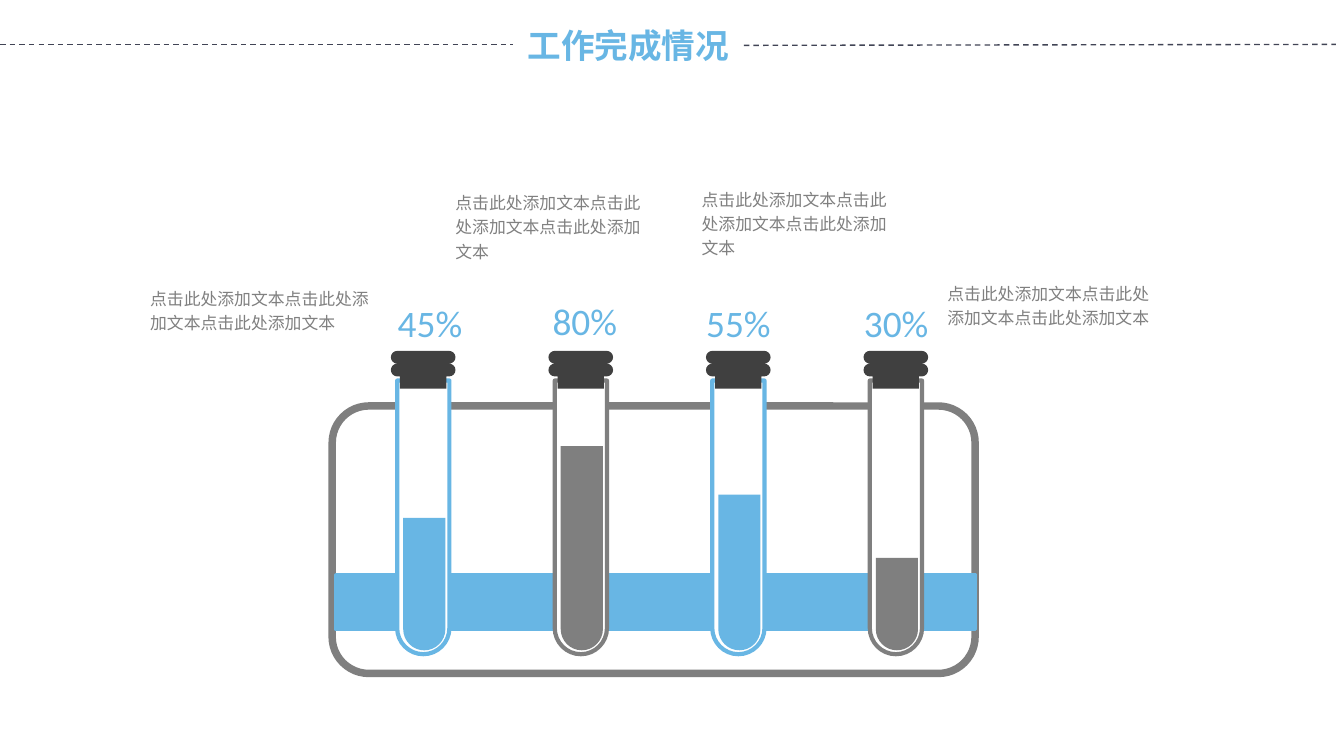
from lxml.etree import SubElement
from pptx import Presentation
from pptx.dml.color import RGBColor
from pptx.enum.dml import MSO_LINE
from pptx.enum.shapes import MSO_CONNECTOR as LINK, MSO_SHAPE as SHAPE
from pptx.enum.text import MSO_ANCHOR as ANCHOR, MSO_AUTO_SIZE as AUTO, PP_ALIGN as ALIGN
from pptx.oxml.ns import qn
from pptx.util import Pt

BLUE = RGBColor(0x68, 0xB6, 0xE4)
GRAY = RGBColor(0x7F, 0x7F, 0x7F)
NOTE = RGBColor(0x80, 0x80, 0x80)
DARK = RGBColor(0x40, 0x40, 0x40)
RULE = RGBColor(0x41, 0x44, 0x55)
WHITE = RGBColor(0xFF, 0xFF, 0xFF)
SANS = "Noto Sans CJK SC"
BLURB = "点击此处添加文本" * 3
BEND = 0.55  # control length of a quarter circle, in radii

# percent, colour, liquid top, label left and top, note box
TUBES = [
    ("45%", BLUE, 277.4, (206, 157.3), (73.4, 149, 139.7, 33)),
    ("80%", GRAY, 239, (288.9, 156.2), (236.9, 97.6, 121, 47)),
    ("55%", BLUE, 265, (371.2, 157.3), (368.8, 95.7, 116.6, 47)),
    ("30%", GRAY, 298.9, (455.7, 157.3), (500.4, 146.3, 123, 33)),
]


def paint(shape, fill=None, line=None, width=1):
    shape.shadow.inherit = False
    if fill is None:
        shape.fill.background()
    else:
        shape.fill.solid()
        shape.fill.fore_color.rgb = fill
    if line is None:
        shape.line.fill.background()
    else:
        shape.line.color.rgb = line
        shape.line.width = Pt(width)


def write(frame, text, size, color, font, bold=False):
    par = frame.paragraphs[0]
    run = par.add_run()
    run.text = text
    run.font.size = Pt(size)
    run.font.bold = bold
    run.font.color.rgb = color
    run.font.name = font
    SubElement(run.font._element, qn("a:ea"), typeface=font)
    return par


def outline(slide, start, parts):
    """Each part is a tuple of points: one for a line, three for a curve."""
    spots = [(Pt(x), Pt(y)) for part in parts for x, y in part]
    path = slide.shapes.build_freeform(Pt(start[0]), Pt(start[1]), scale=1.0)
    path.add_line_segments(spots, close=True)
    shape = path.convert_to_shape()
    steps = iter(list(shape._element.iter(qn("a:lnTo"))))
    for part in parts:
        step = next(steps)
        if len(part) == 3:
            curve = step.makeelement(qn("a:cubicBezTo"))
            step.addprevious(curve)
            for piece in (step, next(steps), next(steps)):
                curve.append(piece[0])
                piece.getparent().remove(piece)
    return shape


def quarter(x, y, dx, dy, flat):
    """Curve from (x, y) by (dx, dy), leaving level if flat, else upright."""
    if flat:
        first, last = (x + BEND * dx, y), (x + dx, y + (1 - BEND) * dy)
    else:
        first, last = (x, y + BEND * dy), (x + (1 - BEND) * dx, y + dy)
    return first, last, (x + dx, y + dy)


def round_end(slide, x, y, w, h):
    """A column with a half-circle bottom."""
    r = w / 2
    low = y + h - r
    return outline(slide, (x, y), [
        ((x + w, y),), ((x + w, low),),
        quarter(x + w, low, -r, r, False),
        quarter(x + r, y + h, -r, -r, True),
    ])


def add_cap(slide, x, y, w, h):
    r, inset = 3.43, 4.9
    left, right, end = x + r, x + w - r, x + w
    rows = (y, y + 2 * r)
    parts = [((right, y),)]
    for top in rows:
        parts += [quarter(right, top, r, r, True),
                  quarter(end, top + r, -r, r, False)]
    neck = y + 4 * r
    parts += [((px, py),) for px, py in (
        (end - inset, neck), (end - inset, y + h),
        (x + inset, y + h), (x + inset, neck), (left, neck))]
    for top in reversed(rows):
        parts += [quarter(left, top + 2 * r, -r, -r, True),
                  quarter(x, top + r, r, -r, False)]
    paint(outline(slide, (left, y), parts), DARK)


def add_tube(slide, x, y, w, h, color, level):
    paint(round_end(slide, x, y, w, h), WHITE, color, 2.25)
    add_cap(slide, x - 3.4, y - 15.9, w + 6.6, 20.3)
    base = y + h - 2.1
    paint(round_end(slide, x + 3.2, level, w - 5.4, base - level), color)


def add_rack(slide, x, y, w, h):
    box = slide.shapes.add_shape(SHAPE.ROUNDED_RECTANGLE, Pt(x), Pt(y), Pt(w), Pt(h))
    box.adjustments[0] = 0.137
    paint(box, None, GRAY, 4)
    band = slide.shapes.add_shape(SHAPE.RECTANGLE, Pt(x + 2), Pt(y + 90.7),
                                  Pt(w - 1.8), Pt(29))
    paint(band, BLUE, BLUE, 2)


def add_text(slide, x, y, w, h, text, size, color, font, wrap):
    frame = slide.shapes.add_textbox(Pt(x), Pt(y), Pt(w), Pt(h)).text_frame
    frame.word_wrap = wrap
    frame.auto_size = AUTO.SHAPE_TO_FIT_TEXT
    return write(frame, text, size, color, font)


def add_rule(slide, x, y, w, rise=0):
    line = slide.shapes.add_connector(LINK.STRAIGHT, Pt(x), Pt(y), Pt(x + w), Pt(y - rise))
    line.line.color.rgb = RULE
    line.line.width = Pt(0.75)
    line.line.dash_style = MSO_LINE.DASH
    SubElement(line._element.spPr, qn("a:effectLst"))


def add_head(slide, x, y, w, h):
    add_rule(slide, 0, 23.8, x)
    add_rule(slide, x + w, 24.3, 317.2, 0.5)
    title = slide.shapes.title
    title.left, title.top, title.width, title.height = Pt(x), Pt(y), Pt(w), Pt(h)
    frame = title.text_frame
    frame.margin_left = frame.margin_right = frame.margin_top = frame.margin_bottom = 0
    frame.word_wrap = False
    frame.auto_size = AUTO.NONE
    frame.vertical_anchor = ANCHOR.MIDDLE
    par = write(frame, "工作完成情况", 18, BLUE, SANS, True)
    par.alignment = ALIGN.CENTER


def add_chart(slide, x, y, w, h):
    """The rack with its tubes, evenly spaced, and their texts."""
    add_rack(slide, x, y, w, h)
    for i, (share, color, level, spot, note) in enumerate(TUBES):
        add_tube(slide, x + 34.8 + 84.4 * i, y - 13.6, 28, 146.6, color, level)
        add_text(slide, *spot, 50.2, 31.5, share, 20, BLUE, "Calibri", False)
        par = add_text(slide, *note, BLURB, 9, NOTE, SANS, True)
        par.line_spacing = 1.2


def main():
    deck = Presentation()
    deck.slide_width, deck.slide_height = Pt(720), Pt(405)
    slide = deck.slides.add_slide(deck.slide_layouts.get_by_name("Title Only"))
    add_head(slide, 274.7, 9.6, 123.8, 29)
    add_chart(slide, 178, 217.5, 344.4, 143.3)
    deck.save("out.pptx")


if __name__ == "__main__":
    main()
